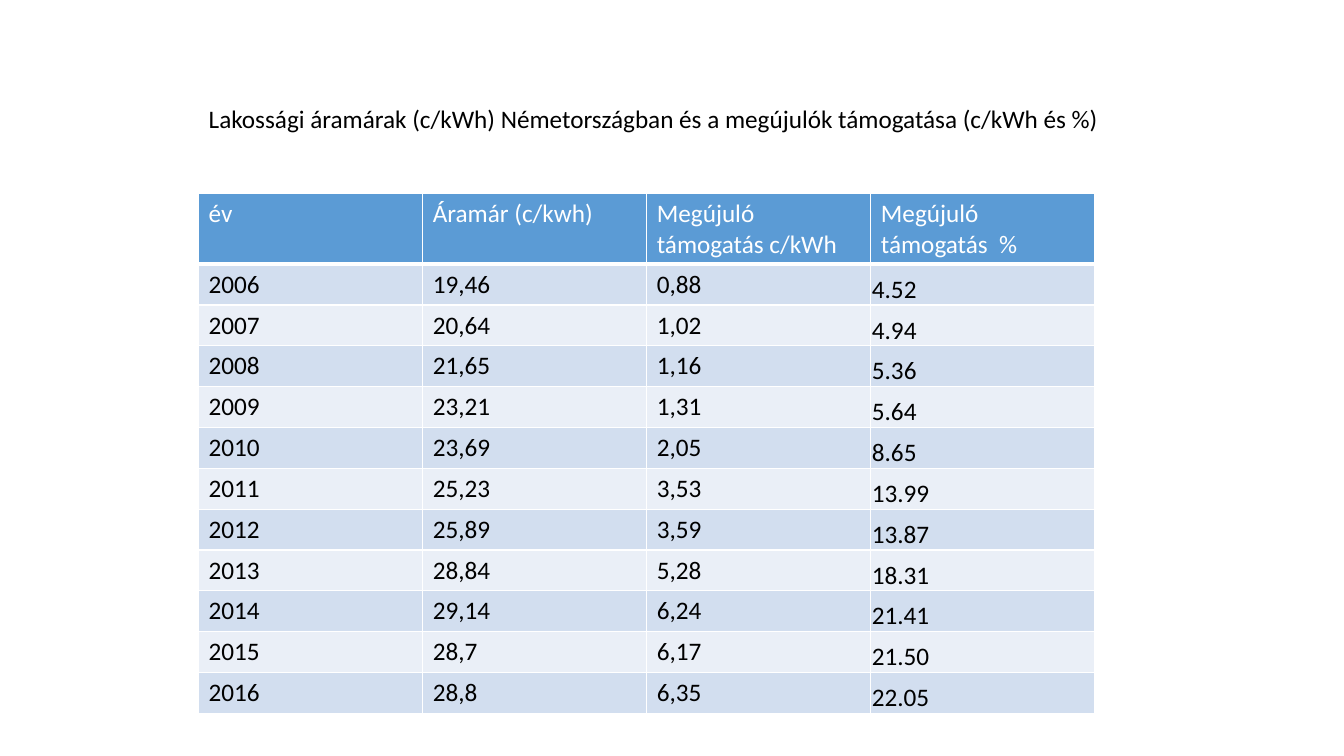
from dataclasses import astuple, dataclass

from lxml import etree
from pptx import Presentation
from pptx.dml.color import RGBColor
from pptx.enum.text import MSO_ANCHOR, MSO_AUTO_SIZE, PP_ALIGN
from pptx.oxml.ns import qn
from pptx.slide import Slide
from pptx.table import _Cell
from pptx.util import Inches, Pt

WHITE = RGBColor(0xFF, 0xFF, 0xFF)
BLACK = RGBColor(0x00, 0x00, 0x00)
HEADER_BLUE = RGBColor(0x5B, 0x9B, 0xD5)
BAND_COLORS = (RGBColor(0xD2, 0xDE, 0xEF), RGBColor(0xEA, 0xEF, 0xF7))

ANCHOR_TOP = MSO_ANCHOR.TOP
ANCHOR_BOTTOM = MSO_ANCHOR.BOTTOM
ALIGN_LEFT = PP_ALIGN.LEFT
FIT_SHAPE = MSO_AUTO_SIZE.SHAPE_TO_FIT_TEXT

FONT_NAME = "Calibri"
FONT_SIZE = Pt(18)
TITLE_ONLY_LAYOUT = 5

SLIDE_WIDTH, SLIDE_HEIGHT = Inches(13.33), Inches(7.5)
CONTENT_LEFT = Inches(1.97)
TITLE_TOP, TITLE_WIDTH, TITLE_HEIGHT = Inches(0.97), Inches(9.24), Inches(0.4)
TABLE_TOP, TABLE_WIDTH, TABLE_HEIGHT = Inches(1.92), Inches(8.89), Inches(5.16)
HEADER_HEIGHT = Inches(0.7)

TITLE = "Lakossági áramárak (c/kWh) Németországban és a megújulók támogatása (c/kWh és %)"
HEADERS = ("év", "Áramár (c/kwh)", "Megújuló támogatás c/kWh", "Megújuló támogatás  %")


@dataclass(frozen=True)
class YearPrice:
    year: str
    price: str
    support: str
    support_percent: str


YEAR_PRICES = (
    YearPrice("2006", "19,46", "0,88", "4.52"),
    YearPrice("2007", "20,64", "1,02", "4.94"),
    YearPrice("2008", "21,65", "1,16", "5.36"),
    YearPrice("2009", "23,21", "1,31", "5.64"),
    YearPrice("2010", "23,69", "2,05", "8.65"),
    YearPrice("2011", "25,23", "3,53", "13.99"),
    YearPrice("2012", "25,89", "3,59", "13.87"),
    YearPrice("2013", "28,84", "5,28", "18.31"),
    YearPrice("2014", "29,14", "6,24", "21.41"),
    YearPrice("2015", "28,7", "6,17", "21.50"),
    YearPrice("2016", "28,8", "6,35", "22.05"),
)


def format_text(text_frame, color: RGBColor) -> None:
    for paragraph in text_frame.paragraphs:
        paragraph.alignment = ALIGN_LEFT
        for run in paragraph.runs:
            run.font.name = FONT_NAME
            run.font.size = FONT_SIZE
            run.font.bold = False
            run.font.color.rgb = color


def add_borders(cell: _Cell, bottom_points: int) -> None:
    """Draw white cell borders; call before filling, as lines precede the fill."""
    properties = cell._tc.get_or_add_tcPr()
    for side, points in (("L", 1), ("R", 1), ("T", 1), ("B", bottom_points)):
        line = etree.SubElement(properties, qn(f"a:ln{side}"), w=str(Pt(points)))
        fill = etree.SubElement(line, qn("a:solidFill"))
        etree.SubElement(fill, qn("a:srgbClr"), val=str(WHITE))


def fill_cell(cell: _Cell, text: str, background: RGBColor, color: RGBColor,
              bottom_points: int = 1) -> None:
    cell.text_frame.text = text
    format_text(cell.text_frame, color)
    add_borders(cell, bottom_points)
    cell.fill.solid()
    cell.fill.fore_color.rgb = background


def seat_at_bottom(cell: _Cell) -> None:
    cell.vertical_anchor = ANCHOR_BOTTOM
    cell.margin_left = cell.margin_top = cell.margin_right = Inches(0.01)
    cell.margin_bottom = 0


def place_title(slide: Slide) -> None:
    title = slide.shapes.title
    title.left, title.top = CONTENT_LEFT, TITLE_TOP
    title.width, title.height = TITLE_WIDTH, TITLE_HEIGHT
    text_frame = title.text_frame
    text_frame.text = TITLE
    text_frame.word_wrap = True
    text_frame.auto_size = FIT_SHAPE
    text_frame.vertical_anchor = ANCHOR_TOP
    format_text(text_frame, BLACK)


def add_price_table(slide: Slide) -> None:
    table = slide.shapes.add_table(
        len(YEAR_PRICES) + 1, len(HEADERS),
        CONTENT_LEFT, TABLE_TOP, TABLE_WIDTH, TABLE_HEIGHT,
    ).table
    table.rows[0].height = HEADER_HEIGHT
    for column, header in enumerate(HEADERS):
        fill_cell(table.cell(0, column), header, HEADER_BLUE, WHITE, bottom_points=3)

    year_height = (TABLE_HEIGHT - HEADER_HEIGHT) // len(YEAR_PRICES)
    for index, year_price in enumerate(YEAR_PRICES):
        row = index + 1
        table.rows[row].height = year_height
        for column, value in enumerate(astuple(year_price)):
            fill_cell(table.cell(row, column), value, BAND_COLORS[index % 2], BLACK)
        seat_at_bottom(table.cell(row, len(HEADERS) - 1))


def main() -> None:
    presentation = Presentation()
    presentation.slide_width, presentation.slide_height = SLIDE_WIDTH, SLIDE_HEIGHT
    slide = presentation.slides.add_slide(presentation.slide_layouts[TITLE_ONLY_LAYOUT])
    place_title(slide)
    add_price_table(slide)
    presentation.save("out.pptx")


if __name__ == "__main__":
    main()
